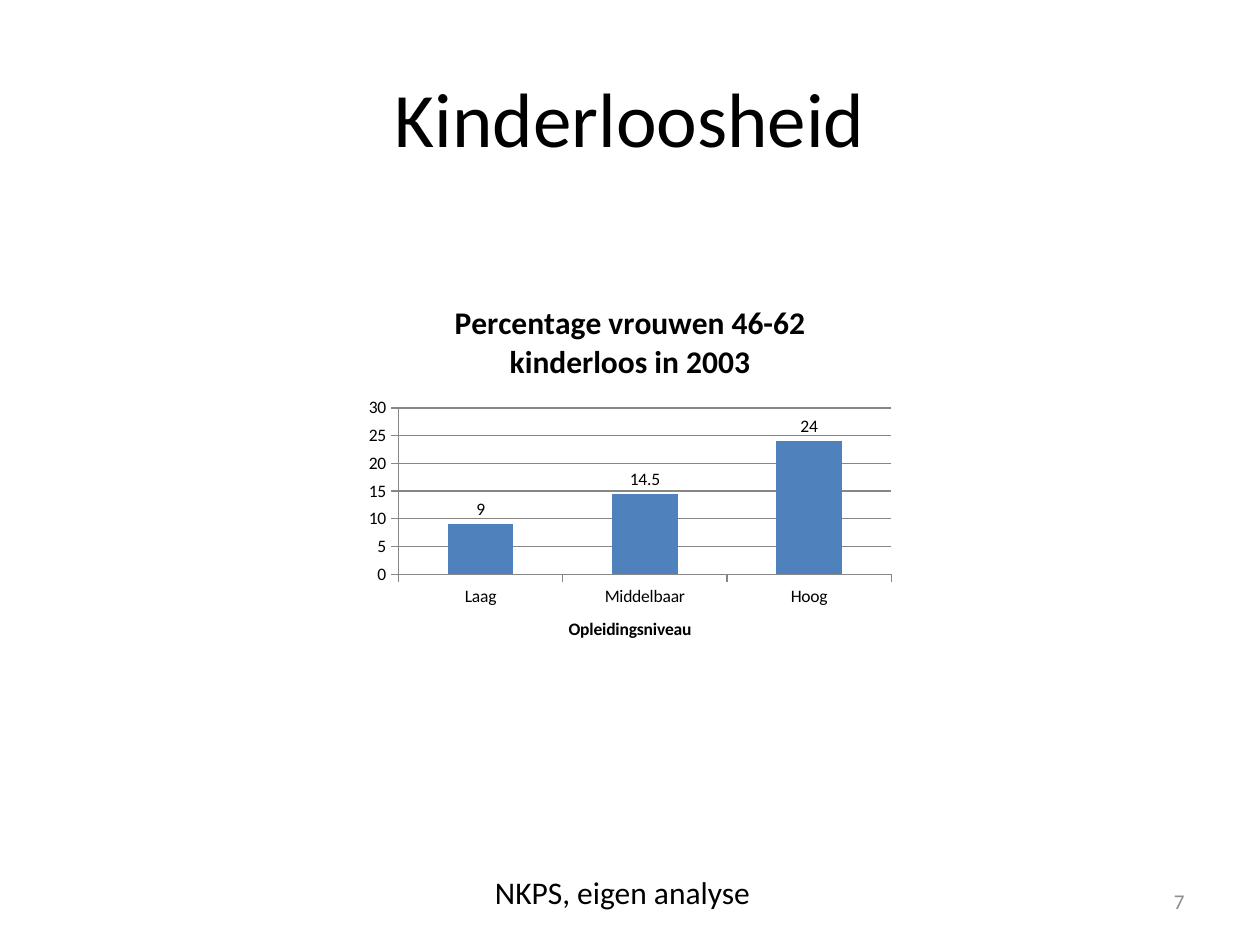
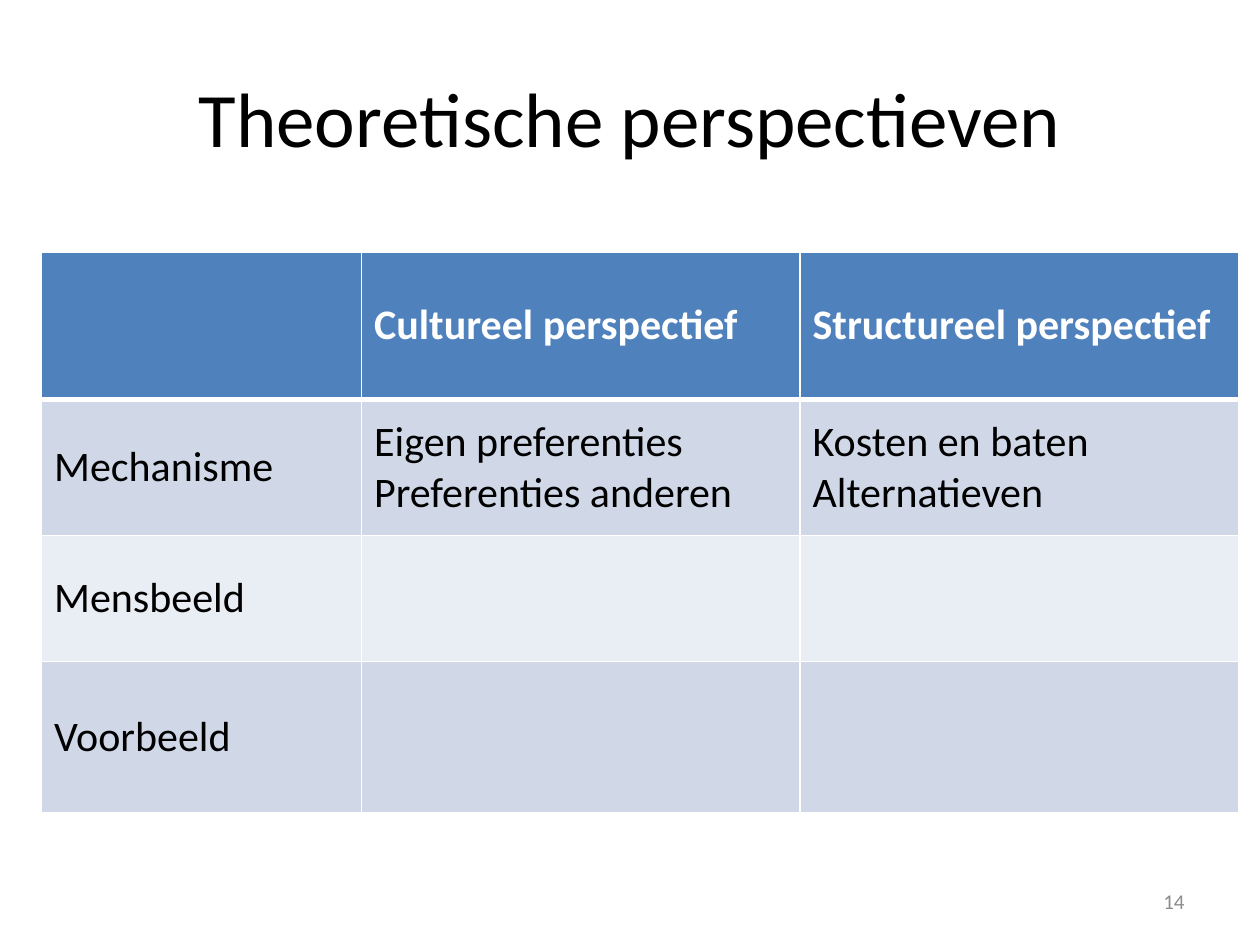
from lxml.etree import SubElement
from pptx import Presentation
from pptx.chart.data import CategoryChartData
from pptx.dml.color import RGBColor
from pptx.enum.chart import XL_CHART_TYPE, XL_LABEL_POSITION, XL_TICK_MARK
from pptx.enum.text import MSO_ANCHOR, PP_ALIGN
from pptx.oxml.ns import qn
from pptx.util import Pt

PX = 9144
FONT = "Calibri"
COLORS = {
    "white": "FFFFFF",
    "text": "000000",
    "number": "8C8C8C",
    "axis": "868686",
    "accent": "4F81BD",
    "band_dark": "D0D8E8",
    "band_light": "E9EDF4",
}
TITLE_BOX = (50, 30, 900, 125)
NUMBER_BOX = (717, 695, 233, 40)
SOURCE_BOX = (383, 688, 425, 42)
CHART_BOX = (284, 223, 432, 305)
TABLE_BOX = (33, 200, 950, 445)
COLUMN_WIDTHS = (254, 348, 348)
ROW_HEIGHTS = (117, 108, 100, 120)
PERSPECTIVES = (
    ("", "Cultureel perspectief", "Structureel perspectief"),
    ("Mechanisme", "Eigen preferenties\nPreferenties anderen", "Kosten en baten\nAlternatieven"),
    ("Mensbeeld", "", ""),
    ("Voorbeeld", "", ""),
)


def color(name):
    """Return the named colour."""
    return RGBColor.from_string(COLORS[name])


def emu(box):
    """Turn the px lengths of a box into EMU."""
    return [length * PX for length in box]


def style_font(font, size, name="text", bold=False):
    """Set typeface, size, colour and weight of a font."""
    font.name, font.size, font.bold = FONT, Pt(size), bold
    font.color.rgb = color(name)


def write(frame, text, size, name="text", bold=False, align=PP_ALIGN.LEFT):
    """Fill a text frame with one paragraph for each line."""
    frame.text = text
    for para in frame.paragraphs:
        para.alignment = align
        style_font(para.font, size, name, bold)


def add_text(page, box, text, size, name="text", align=PP_ALIGN.LEFT, anchor=MSO_ANCHOR.TOP):
    """Add a wrapping text box."""
    frame = page.shapes.add_textbox(*emu(box)).text_frame
    frame.word_wrap = True
    frame.vertical_anchor = anchor
    write(frame, text, size, name, align=align)


def add_page(deck, title, number):
    """Add a slide with its title and slide number."""
    page = deck.slides.add_slide(deck.slide_layouts[5])
    heading = page.shapes.title
    heading.left, heading.top, heading.width, heading.height = emu(TITLE_BOX)
    heading.text_frame.vertical_anchor = MSO_ANCHOR.MIDDLE
    write(heading.text_frame, title, 44, align=PP_ALIGN.CENTER)
    add_text(page, NUMBER_BOX, number, 12, "number", PP_ALIGN.RIGHT, MSO_ANCHOR.MIDDLE)
    return page


def add_childless_chart(page, box):
    """Add the column chart of childlessness by level of education."""
    data = CategoryChartData()
    data.categories = ("Laag", "Middelbaar", "Hoog")
    data.add_series("Series 1", (9, 14.5, 24))
    chart = page.shapes.add_chart(XL_CHART_TYPE.COLUMN_CLUSTERED, *emu(box), data).chart
    style_font(chart.font, 10)
    chart.has_legend = False
    chart.has_title = True
    write(chart.chart_title.text_frame, "Percentage vrouwen 46-62 kinderloos in 2003",
          18, bold=True, align=PP_ALIGN.CENTER)
    write(chart.category_axis.axis_title.text_frame, "Opleidingsniveau",
          10, bold=True, align=PP_ALIGN.CENTER)
    for axis in (chart.category_axis, chart.value_axis):
        axis.major_tick_mark = XL_TICK_MARK.OUTSIDE
        axis.minor_tick_mark = XL_TICK_MARK.NONE
        axis.format.line.color.rgb = color("axis")
    values = chart.value_axis
    values.minimum_scale, values.maximum_scale, values.major_unit = 0, 30, 5
    values.major_gridlines.format.line.color.rgb = color("axis")
    plot = chart.plots[0]
    plot.gap_width = 150
    plot.vary_by_categories = False
    plot.has_data_labels = True
    labels = plot.data_labels
    labels.show_value = True
    labels.position = XL_LABEL_POSITION.OUTSIDE_END
    style_font(labels.font, 10)
    columns = plot.series[0]
    columns.invert_if_negative = False
    columns.format.fill.solid()
    columns.format.fill.fore_color.rgb = color("accent")


def add_borders(cell, top, bottom):
    """Draw white cell borders, with top and bottom widths in points."""
    properties = cell._tc.get_or_add_tcPr()
    for tag, width in (("a:lnL", 1), ("a:lnR", 1), ("a:lnT", top), ("a:lnB", bottom)):
        line = SubElement(properties, qn(tag), w=str(Pt(width)))
        fill = SubElement(line, qn("a:solidFill"))
        SubElement(fill, qn("a:srgbClr"), val=COLORS["white"])


def add_perspective_table(page, box):
    """Add the table that compares the two perspectives."""
    table = page.shapes.add_table(len(ROW_HEIGHTS), len(COLUMN_WIDTHS), *emu(box)).table
    for column, width in zip(table.columns, COLUMN_WIDTHS):
        column.width = width * PX
    for row, height in zip(table.rows, ROW_HEIGHTS):
        row.height = height * PX
    for r, texts in enumerate(PERSPECTIVES):
        header = r == 0
        band = "accent" if header else "band_dark" if r % 2 else "band_light"
        for c, text in enumerate(texts):
            cell = table.cell(r, c)
            add_borders(cell, 3 if r == 1 else 1, 3 if header else 1)
            cell.fill.solid()
            cell.fill.fore_color.rgb = color(band)
            cell.vertical_anchor = MSO_ANCHOR.MIDDLE
            write(cell.text_frame, text, 24, "white" if header else "text", header)


def main():
    """Build and save the deck."""
    deck = Presentation()
    deck.slide_width, deck.slide_height = emu((1000, 750))
    page = add_page(deck, "Kinderloosheid", "7")
    add_text(page, SOURCE_BOX, "NKPS, eigen analyse", 18)
    add_childless_chart(page, CHART_BOX)
    page = add_page(deck, "Theoretische perspectieven", "14")
    add_perspective_table(page, TABLE_BOX)
    deck.save("out.pptx")


if __name__ == "__main__":
    main()
